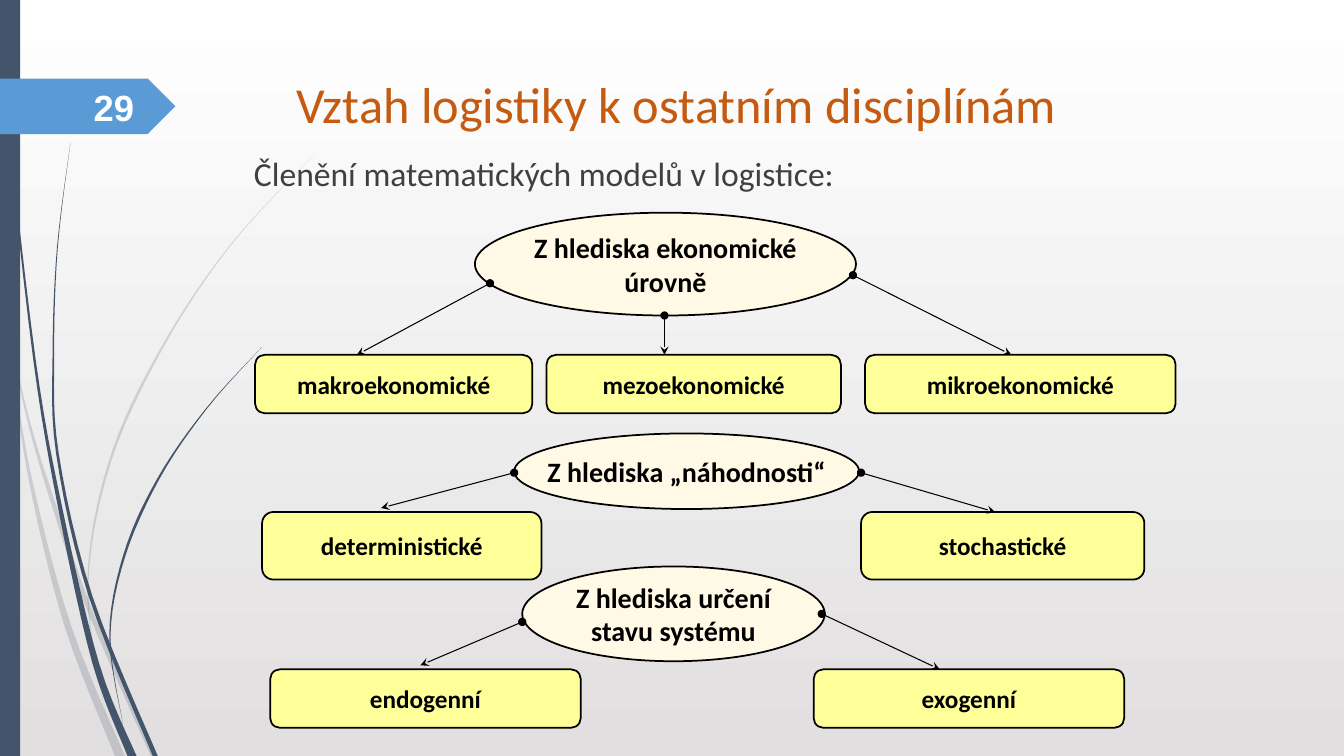
from typing import NamedTuple

from lxml import etree
from pptx import Presentation
from pptx.dml.color import RGBColor
from pptx.enum.shapes import MSO_CONNECTOR, MSO_SHAPE
from pptx.enum.text import MSO_ANCHOR, PP_ALIGN
from pptx.oxml.ns import qn
from pptx.util import Inches, Pt

OVAL, ROUND = MSO_SHAPE.OVAL, MSO_SHAPE.ROUNDED_RECTANGLE
RECT, ARROW = MSO_SHAPE.RECTANGLE, MSO_SHAPE.PENTAGON
STRAIGHT = MSO_CONNECTOR.STRAIGHT
LEFT, CENTER, RIGHT = PP_ALIGN.LEFT, PP_ALIGN.CENTER, PP_ALIGN.RIGHT
TOP, MIDDLE = MSO_ANCHOR.TOP, MSO_ANCHOR.MIDDLE
BLACK, SLATE, CREAM, YELLOW = "000000", "44546A", "FFF9E6", "FFFF99"
STEPS = 6

Point = tuple[float, float]


class Box(NamedTuple):
    left: float
    top: float
    width: float
    height: float


class Model(NamedTuple):
    """A box in a row, with the arrow that leads to it."""
    text: str
    left: float
    width: float
    start: Point
    end: Point


class Group(NamedTuple):
    topic: str
    box: Box
    top: float
    height: float
    models: list[Model]


class Strand(NamedTuple):
    """A blade of grass along its knots, from a thin tip to its end width."""
    knots: list[Point]
    middle: float
    end: float
    alpha: int = 100


class Label(NamedTuple):
    text: str
    box: Box
    size: int
    color: str
    font: str = "Calibri"
    bold: bool = False
    align: PP_ALIGN = LEFT
    anchor: MSO_ANCHOR = TOP
    spacing: float = 1.0


GROUPS = [
    Group("Z hlediska ekonomické\núrovně", Box(4.71, 2.11, 3.78, 1.02),
          3.52, 0.58, [
        Model("makroekonomické", 2.53, 2.75, (4.86, 2.81), (3.54, 3.52)),
        Model("mezoekonomické", 5.42, 2.92, (6.59, 3.13), (6.59, 3.52)),
        Model("mikroekonomické", 8.58, 3.08, (8.46, 2.73), (10.03, 3.52))]),
    Group("Z hlediska „náhodnosti“", Box(5.1, 4.3, 3.42, 0.75), 5.08, 0.67, [
        Model("deterministické", 2.6, 2.77, (5.1, 4.69), (3.78, 5.04)),
        Model("stochastické", 8.54, 2.81, (8.54, 4.69), (9.87, 5.08))]),
    Group("Z hlediska určení\nstavu systému", Box(5.18, 5.62, 3, 0.94),
          6.64, 0.58, [
        Model("endogenní", 2.68, 3.08, (5.18, 6.17), (4.17, 6.6)),
        Model("exogenní", 8.07, 3.08, (8.15, 6.09), (9.32, 6.64))]),
]
LABELS = [
    Label("29", Box(0.58, 0.86, 0.85, 0.4), 26, "FFFFFF", "Arial", True,
          RIGHT, MIDDLE),
    Label("Vztah logistiky k ostatním disciplínám",
          Box(2.84, 0.68, 9.75, 0.8), 36, "C55A11"),
    Label("Členění matematických modelů v logistice:",
          Box(2.42, 1.55, 9.75, 0.5), 24, "404040", spacing=0.8),
]
STRANDS = [
    Strand([(0, 2.9), (0.29, 4.2), (0.6, 5.21), (0.9, 6.08), (1.52, 7.5)],
           0.05, 0.05, 20),
    Strand([(0.11, 3.5), (0.29, 4.7), (0.67, 6.2), (1.19, 7.5)],
           0.05, 0.1, 20),
    Strand([(3.12, 1.53), (2.28, 2.44), (1.59, 3.48), (1.08, 4.61),
            (0.87, 5.84), (1.05, 7.11)], 0.03, 0, 20),
    Strand([(0.04, 0), (0.07, 1.1), (0.34, 3.55), (0.6, 5.05), (0.95, 6.58),
            (1.31, 7.5)], 0.03, 0.09),
    Strand([(0.7, 1.41), (0.57, 2.45), (0.53, 3.49), (0.57, 4.5),
            (0.9, 5.92), (1.54, 7.5)], 0.02, 0.05),
    Strand([(2.6, 3.44), (2.05, 4.05), (1.57, 4.75), (1.23, 5.52),
            (1.09, 6.32), (1.22, 7.19)], 0.03, 0),
]


def rgb(code: str) -> RGBColor:
    return RGBColor.from_string(code)


def smooth(knots: list[Point]) -> list[Point]:
    """Run a Catmull-Rom curve through the knots."""
    ends = [knots[0], *knots, knots[-1]]
    curve = []
    for near in zip(ends, ends[1:], ends[2:], ends[3:]):
        for step in range(STEPS):
            t = step / STEPS
            curve.append(tuple(
                q + t * (r - p + t * (2 * p - 5 * q + 4 * r - s
                                      + t * (3 * q - p - 3 * r + s))) / 2
                for p, q, r, s in zip(*near)))
    return [*curve, knots[-1]]


def paint(shape, color: str) -> None:
    shape.shadow.inherit = False
    shape.fill.solid()
    shape.fill.fore_color.rgb = rgb(color)
    shape.line.fill.background()


def draw_strand(shapes, strand: Strand) -> None:
    curve = smooth(strand.knots)
    half = (len(curve) - 1) / 2
    near, far = [], []
    for i, (x, y) in enumerate(curve):
        t = i / half
        wide = (strand.middle * t if t < 1 else
                strand.middle + (strand.end - strand.middle) * (t - 1))
        near.append((Inches(x - wide / 2), Inches(y)))
        far.append((Inches(x + wide / 2), Inches(y)))
    pen = shapes.build_freeform(*near[0])
    pen.add_line_segments(near[1:] + far[::-1])
    blade = pen.convert_to_shape()
    paint(blade, SLATE)
    tint = blade._element.spPr.find(f".//{qn('a:srgbClr')}")
    etree.SubElement(tint, qn("a:alpha"), val=str(strand.alpha * 1000))


def draw_shape(shapes, kind: MSO_SHAPE, box: Box, color: str):
    shape = shapes.add_shape(kind, *map(Inches, box))
    paint(shape, color)
    return shape


def style(frame, size: int, color: str, font: str, bold: bool,
          align: PP_ALIGN) -> None:
    for para in frame.paragraphs:
        para.alignment = align
        for run in para.runs:
            run.font.size, run.font.name = Pt(size), font
            run.font.bold, run.font.color.rgb = bold, rgb(color)


def draw_node(shapes, text: str, box: Box, kind: MSO_SHAPE, color: str,
              size: int) -> None:
    shape = draw_shape(shapes, kind, box, color)
    shape.line.color.rgb, shape.line.width = rgb(BLACK), Pt(1.25)
    frame = shape.text_frame
    frame.text = text
    frame.word_wrap, frame.vertical_anchor = False, MIDDLE
    style(frame, size, BLACK, "Calibri", True, CENTER)


def draw_link(shapes, start: Point, end: Point) -> None:
    link = shapes.add_connector(STRAIGHT, *map(Inches, start + end))
    link.line.color.rgb, link.line.width = rgb(BLACK), Pt(0.75)
    pen = link._element.spPr.find(qn("a:ln"))
    etree.SubElement(pen, qn("a:headEnd"), type="oval")
    etree.SubElement(pen, qn("a:tailEnd"), type="stealth")
    etree.SubElement(link._element.spPr, qn("a:effectLst"))


def draw_group(shapes, group: Group) -> None:
    draw_node(shapes, group.topic, group.box, OVAL, CREAM, 20)
    for model in group.models:
        box = Box(model.left, group.top, model.width, group.height)
        draw_node(shapes, model.text, box, ROUND, YELLOW, 18)
        draw_link(shapes, model.start, model.end)


def draw_label(shapes, label: Label) -> None:
    frame = shapes.add_textbox(*map(Inches, label.box)).text_frame
    frame.text = label.text
    frame.word_wrap, frame.vertical_anchor = True, label.anchor
    frame.paragraphs[0].line_spacing = label.spacing
    style(frame, label.size, label.color, label.font, label.bold, label.align)


def main() -> None:
    deck = Presentation()
    deck.slide_width, deck.slide_height = Inches(13.33), Inches(7.5)
    slide = deck.slides.add_slide(deck.slide_layouts[6])
    back = slide.background.fill
    back.gradient()
    back.gradient_angle = 270
    for i, color in enumerate(("FFFFFF", "E1DFDF")):
        stop = back.gradient_stops[i]
        stop.color.rgb, stop.position = rgb(color), i
    shapes = slide.shapes
    for strand in STRANDS:
        draw_strand(shapes, strand)
    draw_shape(shapes, RECT, Box(0, 0, 0.2, 7.5), SLATE)
    draw_shape(shapes, ARROW, Box(0, 0.78, 1.74, 0.55), "5B9BD5")
    for group in GROUPS:
        draw_group(shapes, group)
    for label in LABELS:
        draw_label(shapes, label)
    deck.save("out.pptx")


if __name__ == "__main__":
    main()
